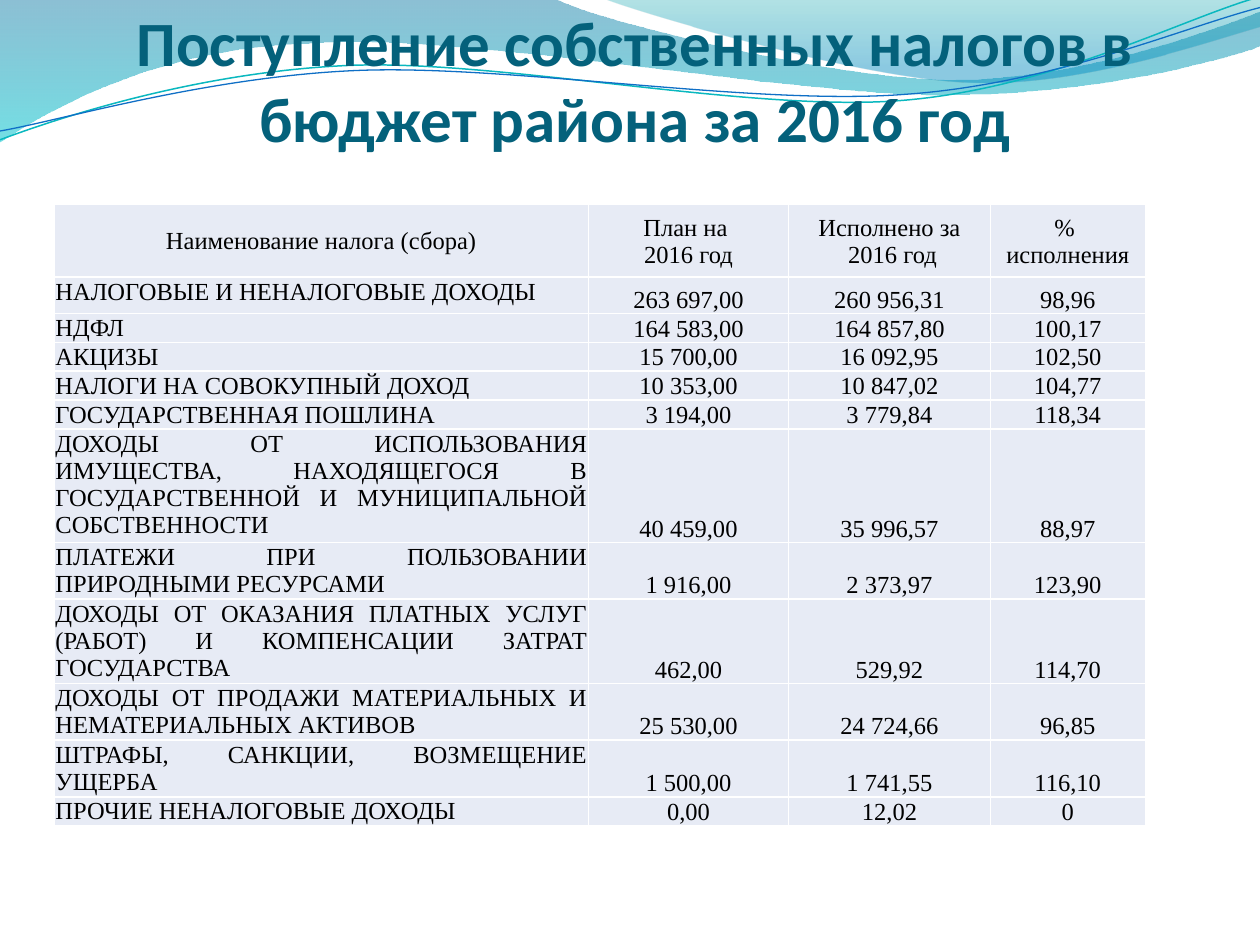
from lxml import etree
from pptx import Presentation
from pptx.dml.color import RGBColor
from pptx.enum.text import MSO_ANCHOR, MSO_AUTO_SIZE, PP_ALIGN
from pptx.oxml.ns import qn
from pptx.util import Inches, Pt

CENTER, JUSTIFY = PP_ALIGN.CENTER, PP_ALIGN.JUSTIFY
TOP, MIDDLE, BOTTOM = MSO_ANCHOR.TOP, MSO_ANCHOR.MIDDLE, MSO_ANCHOR.BOTTOM
NO_FIT = MSO_AUTO_SIZE.NONE

HEAD = ["Наименование налога (сбора)", "План на \n2016 год",
        "Исполнено за\n 2016 год", "% \nисполнения"]
ROWS = [
    ["НАЛОГОВЫЕ И НЕНАЛОГОВЫЕ ДОХОДЫ", "263 697,00", "260 956,31", "98,96"],
    ["НДФЛ", "164 583,00", "164 857,80", "100,17"],
    ["АКЦИЗЫ", "15 700,00", "16 092,95", "102,50"],
    ["НАЛОГИ НА СОВОКУПНЫЙ ДОХОД", "10 353,00", "10 847,02", "104,77"],
    ["ГОСУДАРСТВЕННАЯ ПОШЛИНА", "3 194,00", "3 779,84", "118,34"],
    ["ДОХОДЫ ОТ ИСПОЛЬЗОВАНИЯ ИМУЩЕСТВА, НАХОДЯЩЕГОСЯ В "
     "ГОСУДАРСТВЕННОЙ И МУНИЦИПАЛЬНОЙ СОБСТВЕННОСТИ",
     "40 459,00", "35 996,57", "88,97"],
    ["ПЛАТЕЖИ ПРИ ПОЛЬЗОВАНИИ ПРИРОДНЫМИ РЕСУРСАМИ ",
     "1 916,00", "2 373,97", "123,90"],
    ["ДОХОДЫ ОТ ОКАЗАНИЯ ПЛАТНЫХ УСЛУГ (РАБОТ) И КОМПЕНСАЦИИ ЗАТРАТ "
     "ГОСУДАРСТВА", "462,00", "529,92", "114,70"],
    ["ДОХОДЫ ОТ ПРОДАЖИ МАТЕРИАЛЬНЫХ И НЕМАТЕРИАЛЬНЫХ АКТИВОВ ",
     "25 530,00", "24 724,66", "96,85"],
    ["ШТРАФЫ, САНКЦИИ, ВОЗМЕЩЕНИЕ УЩЕРБА", "1 500,00", "1 741,55", "116,10"],
    ["ПРОЧИЕ НЕНАЛОГОВЫЕ ДОХОДЫ", "0,00", "12,02", "0"],
]
COLS = [4.24, 1.59, 1.6, 1.23]
HEIGHTS = [0.58, 0.29, 0.23, 0.22, 0.23, 0.23, 0.9, 0.45, 0.67, 0.45, 0.45, 0.23]

WIDE = [(0, 0), (4.4, -0.01), (4.76, 0.17, 6.64, 0.63, 7.58, 0.63),
        (8.53, 0.63, 9.58, 0.26, 10, 0.09), (10.01, 0.36),
        (9.83, 0.44, 8.7, 0.76, 7.46, 0.75),
        (6.22, 0.75, 3.82, 0.28, 2.57, 0.34),
        (1.29, 0.36, 0.46, 0.83, -0.01, 1.13), (0, 0)]
RIGHT = [(4.79, -0.01), (5.09, 0.11, 6.82, 0.62, 7.69, 0.65),
         (8.56, 0.69, 9.61, 0.32, 10, 0.21), (10, 0), (4.79, -0.01)]
TEAL = [(0, 1.11), (0.48, 0.93, 1.58, 0.57, 2.77, 0.52),
        (3.95, 0.47, 5.93, 0.89, 7.13, 0.8),
        (8.33, 0.71, 9.38, 0.15, 9.98, -0.02)]
BLUE = [(0, 1.04), (0.47, 0.96, 1.64, 0.61, 2.83, 0.56),
        (4.03, 0.51, 5.97, 0.84, 7.17, 0.75),
        (8.36, 0.67, 9.41, 0.21, 10, 0.06)]


def color(code):
    return RGBColor.from_string(code)


class Deck:
    ink, title_ink, pale, rule = "000000", "04617B", "E7EBF5", "FFFFFF"
    head_font, font = "Calibri", "Times New Roman"

    def __init__(self):
        self.prs = Presentation()
        self.prs.slide_width, self.prs.slide_height = Inches(10), Inches(7.5)
        self.slide = self.prs.slides.add_slide(self.prs.slide_layouts[5])

    def style(self, par, align, font, size, ink, bold=False):
        par.alignment = align
        par.font.name, par.font.size, par.font.bold = font, Pt(size), bold
        par.font.color.rgb = color(ink)

    def outline(self, parts, close):
        ends = [(Inches(part[-2]), Inches(part[-1])) for part in parts]
        pen = self.slide.shapes.build_freeform(*ends[0])
        pen.add_line_segments(ends[1:], close=close)
        shape = pen.convert_to_shape()
        shape.shadow.inherit = False
        for line, part in zip(shape._element.xpath(".//a:lnTo"), parts[1:]):
            if len(part) == 6:
                self.bend(shape, line, part)
        return shape

    def bend(self, shape, line, part):
        line.tag = qn("a:cubicBezTo")
        for place in (0, 2):
            x = Inches(part[place]) - shape.left
            y = Inches(part[place + 1]) - shape.top
            point = etree.Element(qn("a:pt"), x=str(x), y=str(y))
            line.insert(place // 2, point)

    def wave(self, parts, stops):
        shape = self.outline(parts, True)
        shape.line.fill.background()
        shape.fill.gradient()
        shape.fill.gradient_angle = 270
        for stop, (place, code, _) in zip(shape.fill.gradient_stops, stops):
            stop.position = place
            stop.color.rgb = color(code)
        tints = shape._element.xpath(".//a:gs/a:srgbClr")
        for tint, (_, _, alpha) in zip(tints, stops):
            etree.SubElement(tint, qn("a:alpha"), val=str(alpha * 1000))

    def curve(self, parts, code, width):
        shape = self.outline(parts, False)
        shape.fill.background()
        shape.line.color.rgb = color(code)
        shape.line.width = Pt(width)

    def title(self, text, left, top, width, height):
        box = self.slide.shapes.title
        box.left, box.top = Inches(left), Inches(top)
        box.width, box.height = Inches(width), Inches(height)
        self.slide.shapes._spTree.append(box._element)
        frame = box.text_frame
        frame.text = text
        frame.word_wrap, frame.auto_size = True, NO_FIT
        frame.vertical_anchor = BOTTOM
        frame.margin_left = frame.margin_right = frame.margin_bottom = 0
        frame.margin_top = Inches(0.05)
        self.style(frame.paragraphs[0], CENTER, self.head_font, 36,
                   self.title_ink, True)

    def border(self, cell):
        props = cell._tc.get_or_add_tcPr()
        for side in ("lnL", "lnR", "lnT", "lnB"):
            line = etree.SubElement(props, qn("a:" + side), w=str(Pt(1)))
            fill = etree.SubElement(line, qn("a:solidFill"))
            etree.SubElement(fill, qn("a:srgbClr"), val=self.rule)

    def cell(self, cell, text, align, anchor):
        cell.text = text
        cell.vertical_anchor = anchor
        cell.margin_left = cell.margin_right = cell.margin_top = Inches(0.01)
        cell.margin_bottom = 0
        self.border(cell)
        cell.fill.solid()
        cell.fill.fore_color.rgb = color(self.pale)
        for par in cell.text_frame.paragraphs:
            self.style(par, align, self.font, 14, self.ink)

    def table(self, rows, left, top, widths, heights):
        table = self.slide.shapes.add_table(
            len(rows), len(widths), Inches(left), Inches(top),
            Inches(sum(widths)), Inches(sum(heights))).table
        table.first_row = table.horz_banding = False
        for col, width in zip(table.columns, widths):
            col.width = Inches(width)
        for row, height in zip(table.rows, heights):
            row.height = Inches(height)
        for r, row in enumerate(rows):
            for c, text in enumerate(row):
                name = r > 0 and c == 0
                anchor = MIDDLE if r == 0 else TOP if name else BOTTOM
                self.cell(table.cell(r, c), text,
                          JUSTIFY if name else CENTER, anchor)


def main():
    deck = Deck()
    deck.wave(WIDE, [(0, "0074A1", 45), (1, "00C6CF", 55)])
    deck.wave(RIGHT, [(0, "00A1A9", 30), (0.8, "008BBF", 45)])
    deck.curve(TEAL, "0AB8BF", 0.85)
    deck.curve(BLUE, "0F6FC6", 0.75)
    deck.title("Поступление собственных налогов в бюджет района за 2016 год",
               0.5, 0.6, 9.08, 0.63)
    deck.table([HEAD] + ROWS, 0.43, 1.62, COLS, HEIGHTS)
    deck.prs.save("out.pptx")


if __name__ == "__main__":
    main()
